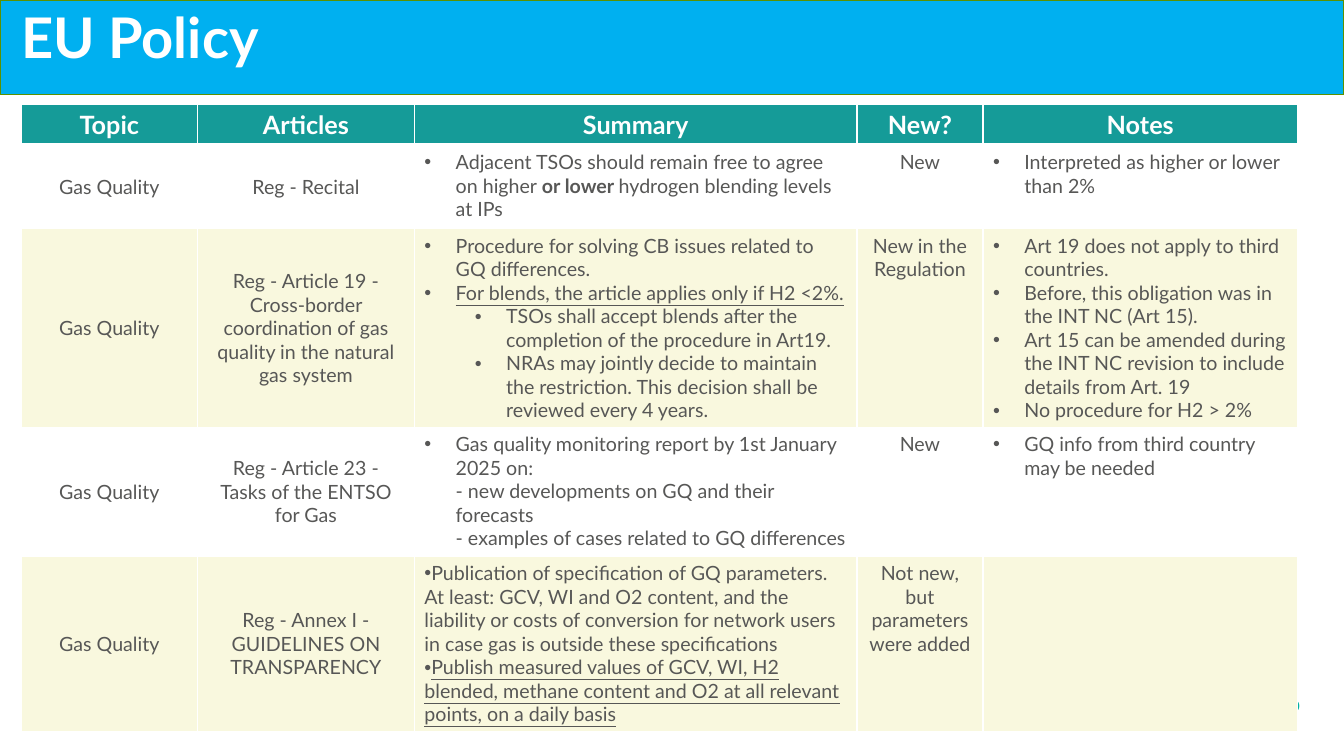
from lxml.etree import SubElement
from pptx import Presentation
from pptx.dml.color import RGBColor
from pptx.enum.shapes import MSO_SHAPE as SHAPE
from pptx.enum.text import MSO_ANCHOR as ANCHOR, MSO_AUTO_SIZE as AUTO, PP_ALIGN as ALIGN
from pptx.oxml.ns import qn
from pptx.util import Inches, Pt

WIDTH, HEIGHT = 13.33, 7.5
LEFT, TABLE_TOP = 0.21, 1.04
BAND_HEIGHT = 0.94
COLUMNS = [1.75, 2.15, 4.39, 1.25, 3.12]
ROWS = [0.39, 0.83, 1.96, 1.28, 1.71]
WHITE, SKY, OLIVE, TEAL = "FFFFFF", "00B0F0", "5C9100", "159B98"
CREAM, GREY, AQUA = "F9F8DE", "575756", "00B2A1"
HANGING = 0.31

HEADERS = ["Topic", "Articles", "Summary", "New?", "Notes"]
POLICIES = [
    ("Reg - Recital",
     [(HANGING, [("Adjacent TSOs should remain free to agree on higher ", ""),
                 ("or lower ", "b"),
                 ("hydrogen blending levels at IPs", "")])],
     "New",
     ["Interpreted as higher or lower than 2%"]),
    ("Reg - Article 19 - Cross-border coordination of gas quality in the natural gas system",
     [(HANGING, [("Procedure for solving CB issues related to GQ differences.", "")]),
      (HANGING, [("For blends, the article applies only if H2 <2%.", "u")]),
      (0.81, [("TSOs shall accept blends after the completion of the procedure in Art19.", "")]),
      (0.81, [("NRAs may jointly decide to maintain the restriction. "
               "This decision shall be reviewed every 4 years.", "")])],
     "New in the Regulation",
     ["Art 19 does not apply to third countries.",
      "Before, this obligation was in the INT NC (Art 15).",
      "Art 15 can be amended during the INT NC revision to include details from Art. 19",
      "No procedure for H2 > 2%"]),
    ("Reg - Article 23 - Tasks of the ENTSO for Gas",
     [(HANGING, [("Gas quality monitoring report by 1st January 2025 on:\n"
                  "- new developments on GQ and their forecasts\n"
                  "- examples of cases related to GQ differences", "")])],
     "New",
     ["GQ info from third country may be needed"]),
    ("Reg - Annex I - GUIDELINES ON TRANSPARENCY",
     [(0, [("Publication of specification of GQ parameters. At least: GCV, WI and O2 content, "
            "and the liability or costs of conversion for network users in case gas is "
            "outside these specifications", "")]),
      (0, [("Publish measured values of GCV, WI, H2 blended, methane content and O2 at all "
            "relevant points, on a daily basis", "u")])],
     "Not new, but parameters were added",
     []),
]


def rgb(value):
    return RGBColor.from_string(value)


def add_run(p, text, size, color, bold=False, underline=False):
    for i, line in enumerate(text.split("\n")):
        if i:
            p.add_line_break()
        r = p.add_run()
        r.text = line
        r.font.name = "Lato"
        r.font.size = Pt(size)
        r.font.color.rgb = rgb(color)
        r.font.bold = bold
        r.font.underline = underline


def place(sp, left, top, width, height):
    sp.left, sp.top = Inches(left), Inches(top)
    sp.width, sp.height = Inches(width), Inches(height)


def clear_margins(tf):
    tf.margin_left = tf.margin_top = tf.margin_right = tf.margin_bottom = 0


def add_band(s):
    sp = s.shapes.add_shape(SHAPE.RECTANGLE, 0, 0, Inches(WIDTH), Inches(BAND_HEIGHT))
    sp.shadow.inherit = False
    sp.fill.solid()
    sp.fill.fore_color.rgb = rgb(SKY)
    sp.line.color.rgb = rgb(OLIVE)
    sp.line.width = Pt(1)
    s.shapes.element.insert(2, sp.element)


def format_title(s, text):
    title = s.shapes.title
    place(title, LEFT, 0.1, 12.45, BAND_HEIGHT)
    tf = title.text_frame
    clear_margins(tf)
    tf.auto_size = AUTO.NONE
    tf.vertical_anchor = ANCHOR.TOP
    p = tf.paragraphs[0]
    p.alignment = ALIGN.LEFT
    p.line_spacing = 0.9
    add_run(p, text, 40, WHITE, bold=True)


def add_page_number(s, number):
    sp = s.shapes.add_textbox(0, 0, 0, 0)
    place(sp, 12.42, 6.88, 0.47, 0.24)
    tf = sp.text_frame
    tf.word_wrap = True
    clear_margins(tf)
    tf.vertical_anchor = ANCHOR.MIDDLE
    p = tf.paragraphs[0]
    p.alignment = ALIGN.RIGHT
    add_run(p, number, 10, AQUA, bold=True)


def style_cell(cell, fill, bottom=1):
    tcPr = cell._tc.get_or_add_tcPr()
    for side, width in (("L", 1), ("R", 1), ("T", 1), ("B", bottom)):
        ln = SubElement(tcPr, qn(f"a:ln{side}"), w=str(Pt(width)))
        SubElement(SubElement(ln, qn("a:solidFill")), qn("a:srgbClr"), val=WHITE)
    cell.fill.solid()
    cell.fill.fore_color.rgb = rgb(fill)


def write_centred(cell, text, size=14, color=GREY, bold=False, anchor=ANCHOR.MIDDLE):
    cell.vertical_anchor = anchor
    p = cell.text_frame.paragraphs[0]
    p.alignment = ALIGN.CENTER
    add_run(p, text, size, color, bold)


def write_bullets(cell, items):
    tf = cell.text_frame
    for i, (margin, runs) in enumerate(items):
        p = tf.add_paragraph() if i else tf.paragraphs[0]
        p.level = int(margin > HANGING)
        pPr = p._p.get_or_add_pPr()
        pPr.set("marL", str(Inches(margin)))
        pPr.set("indent", str(-Inches(HANGING)))
        SubElement(pPr, qn("a:buFont"), typeface="Arial")
        SubElement(pPr, qn("a:buChar"), char="•")
        for text, style in runs:
            add_run(p, text, 14, GREY, bold=style == "b", underline=style == "u")


def add_policy_table(s):
    frame = s.shapes.add_table(len(ROWS), len(COLUMNS), Inches(LEFT), Inches(TABLE_TOP),
                               Inches(sum(COLUMNS)), Inches(sum(ROWS)))
    table = frame.table
    for column, width in zip(table.columns, COLUMNS):
        column.width = Inches(width)
    for row, height in zip(table.rows, ROWS):
        row.height = Inches(height)
    for cell, text in zip(table.rows[0].cells, HEADERS):
        style_cell(cell, TEAL, bottom=3)
        write_centred(cell, text, 18, WHITE, bold=True)
    for i, (article, summary, status, notes) in enumerate(POLICIES):
        cells = list(table.rows[i + 1].cells)
        for cell in cells:
            style_cell(cell, CREAM if i % 2 else WHITE)
        write_centred(cells[0], "Gas Quality")
        write_centred(cells[1], article)
        write_bullets(cells[2], summary)
        write_centred(cells[3], status, anchor=ANCHOR.TOP)
        write_bullets(cells[4], [(HANGING, [(note, "")]) for note in notes])


def main():
    prs = Presentation()
    prs.slide_width, prs.slide_height = Inches(WIDTH), Inches(HEIGHT)
    s = prs.slides.add_slide(prs.slide_layouts[5])
    add_band(s)
    format_title(s, "EU Policy")
    add_page_number(s, "20")
    add_policy_table(s)
    prs.save("out.pptx")


if __name__ == "__main__":
    main()
